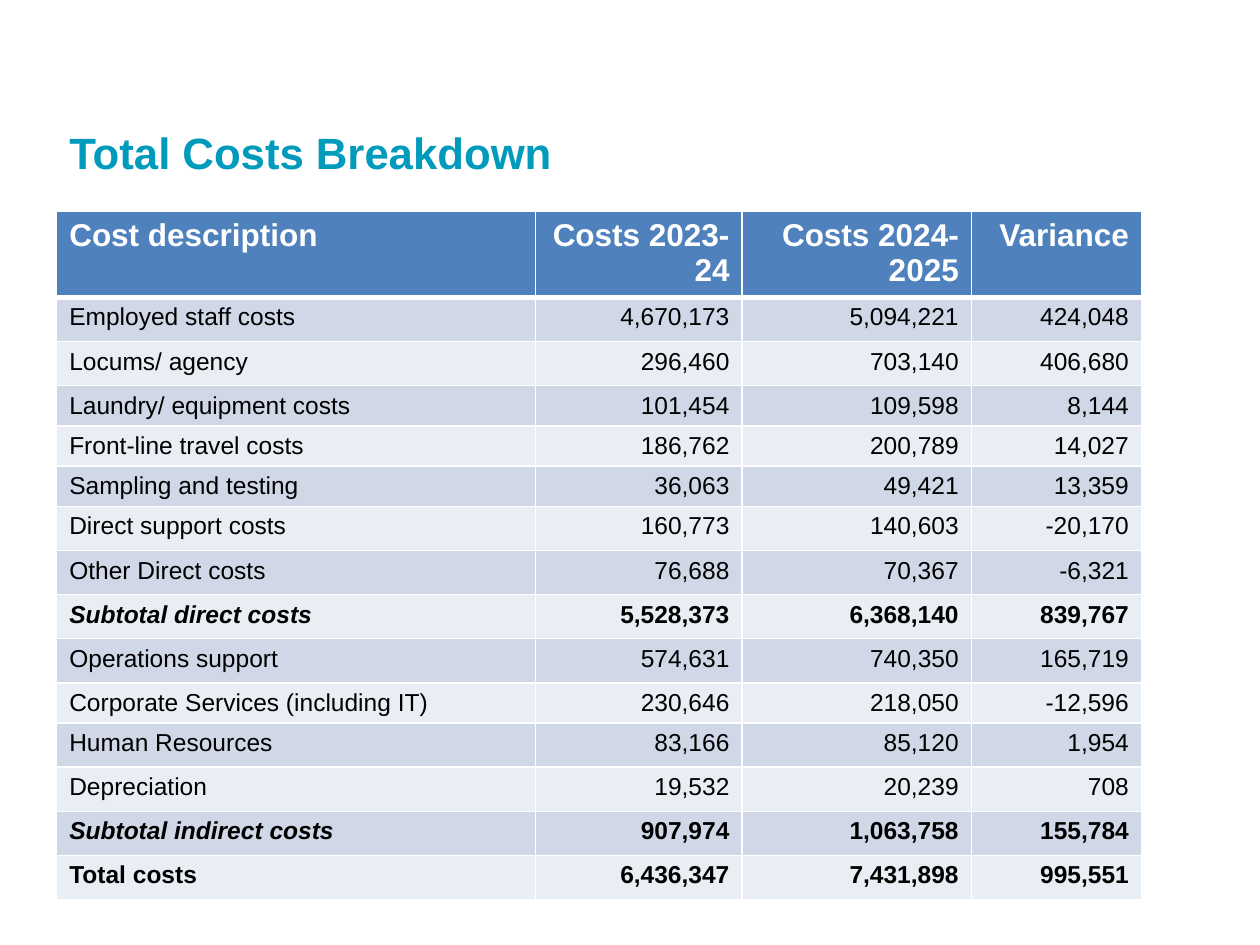
import pptx
import pptx.dml.color
import pptx.enum.text
import pptx.oxml
import pptx.oxml.ns
import pptx.util

Inches = pptx.util.Inches
Pt = pptx.util.Pt
RGBColor = pptx.dml.color.RGBColor
PP_ALIGN = pptx.enum.text.PP_ALIGN

TEAL = RGBColor(0x00, 0x9A, 0xBD)
BLUE = RGBColor(0x4F, 0x81, 0xBD)
BAND_DARK = RGBColor(0xD0, 0xD8, 0xE8)
BAND_LIGHT = RGBColor(0xE9, 0xED, 0xF4)
WHITE = RGBColor(0xFF, 0xFF, 0xFF)
BLACK = RGBColor(0x00, 0x00, 0x00)

COL_WIDTHS = [3.8, 1.64, 1.82, 1.35]
HEADER_HEIGHT = 0.68
ROW_HEIGHT = 0.35
SHORT_HEIGHT = 0.32
SHORT_ROWS = {3, 4, 5, 10}

COSTS = [
    ("Cost description", "Costs 2023-24", "Costs 2024-2025", "Variance"),
    ("Employed staff costs", "4,670,173", "5,094,221", "424,048"),
    ("Locums/ agency", "296,460", "703,140", "406,680"),
    ("Laundry/ equipment costs", "101,454", "109,598", "8,144"),
    ("Front-line travel costs", "186,762", "200,789", "14,027"),
    ("Sampling and testing", "36,063", "49,421", "13,359"),
    ("Direct support costs", "160,773", "140,603", "-20,170"),
    ("Other Direct costs", "76,688", "70,367", "-6,321"),
    ("Subtotal direct costs", "5,528,373", "6,368,140", "839,767"),
    ("Operations support", "574,631", "740,350", "165,719"),
    ("Corporate Services (including IT)", "230,646", "218,050", "-12,596"),
    ("Human Resources", "83,166", "85,120", "1,954"),
    ("Depreciation", "19,532", "20,239", "708"),
    ("Subtotal indirect costs", "907,974", "1,063,758", "155,784"),
    ("Total costs", "6,436,347", "7,431,898", "995,551"),
]


def add_run(p, text, size, color, bold=False, italic=False):
    r = p.add_run()
    r.text = text
    r.font.name = "Arial"
    r.font.size = Pt(size)
    r.font.color.rgb = color
    r.font.bold = bold
    r.font.italic = italic


def set_borders(cell, top, bottom):
    tcPr = cell._tc.get_or_add_tcPr()
    for side, width in (("L", 1), ("R", 1), ("T", top), ("B", bottom)):
        tcPr.append(pptx.oxml.parse_xml(
            f'<a:ln{side} {pptx.oxml.ns.nsdecls("a")} w="{Pt(width)}">'
            f'<a:solidFill><a:srgbClr val="{WHITE}"/></a:solidFill></a:ln{side}>'))


def add_title(s, text):
    sp = s.shapes.title
    sp.left, sp.top = Inches(0.45), Inches(0.95)
    sp.width, sp.height = Inches(6.96), Inches(0.74)
    tf = sp.text_frame
    tf.word_wrap = True
    tf.auto_size = pptx.enum.text.MSO_AUTO_SIZE.NONE
    tf.vertical_anchor = pptx.enum.text.MSO_ANCHOR.TOP
    p = tf.paragraphs[0]
    p.alignment = PP_ALIGN.LEFT
    add_run(p, text, 25, TEAL, bold=True)


def fill_cell(cell, text, row, col, label):
    header = row == 0
    set_borders(cell, 3 if row == 1 else 1, 3 if header else 1)
    cell.fill.solid()
    cell.fill.fore_color.rgb = BLUE if header else BAND_DARK if row % 2 else BAND_LIGHT
    p = cell.text_frame.paragraphs[0]
    p.alignment = PP_ALIGN.RIGHT if col else PP_ALIGN.LEFT
    subtotal = label.startswith("Subtotal")
    add_run(p, text, 18 if header else 14, WHITE if header else BLACK,
            bold=header or subtotal or label.startswith("Total"),
            italic=subtotal and col == 0)


def add_cost_table(s):
    heights = [HEADER_HEIGHT] + [
        SHORT_HEIGHT if row in SHORT_ROWS else ROW_HEIGHT
        for row in range(1, len(COSTS))]
    table = s.shapes.add_table(
        len(COSTS), len(COL_WIDTHS), Inches(0.45), Inches(1.68),
        Inches(sum(COL_WIDTHS)), Inches(sum(heights))).table
    for column, width in zip(table.columns, COL_WIDTHS):
        column.width = Inches(width)
    for row, (values, height) in enumerate(zip(COSTS, heights)):
        table.rows[row].height = Inches(height)
        for col, text in enumerate(values):
            fill_cell(table.cell(row, col), text, row, col, values[0])


def main():
    prs = pptx.Presentation()
    prs.slide_width, prs.slide_height = Inches(10), Inches(7.5)
    s = prs.slides.add_slide(prs.slide_layouts[5])
    add_title(s, "Total Costs Breakdown")
    add_cost_table(s)
    prs.save("out.pptx")


if __name__ == "__main__":
    main()
